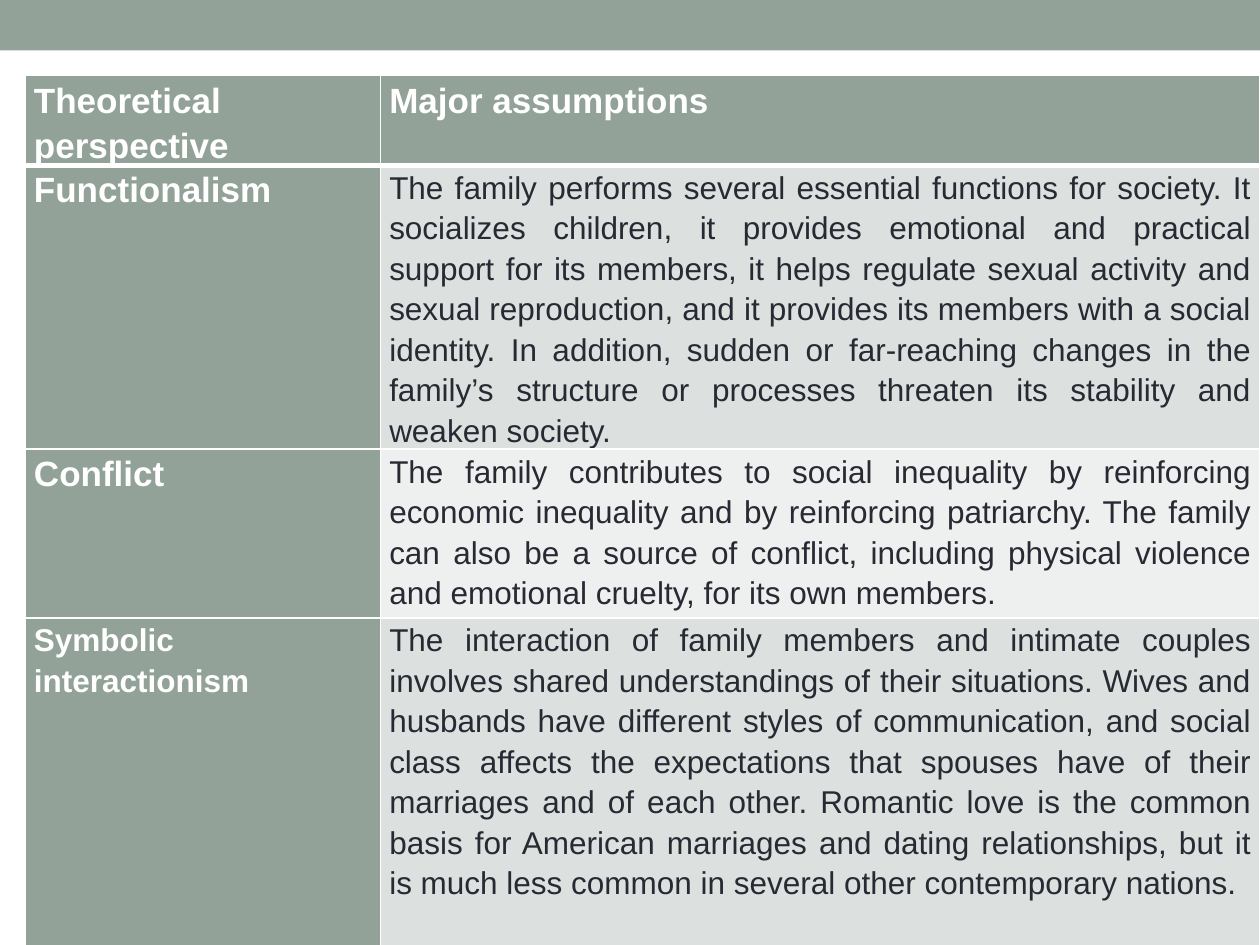
import pptx
import pptx.dml.color
import pptx.enum.shapes
import pptx.enum.text
import pptx.oxml
import pptx.oxml.ns
import pptx.util

THEME = {
    "font": "Arial",
    "sage": "93A299",
    "bands": ["DCE0DE", "EEF0EF"],
    "ink": "292934",
    "white": "FFFFFF",
    "large": 20,
    "body": 18,
    "rule": 1,
    "header_rule": 3,
}

# Each row: perspective, assumptions, label size, height in inches
PERSPECTIVES = [
    ("Theoretical perspective", "Major assumptions", THEME["large"], 0.47),
    ("Functionalism",
     "The family performs several essential functions for society. It socializes "
     "children, it provides emotional and practical support for its members, it helps "
     "regulate sexual activity and sexual reproduction, and it provides its members "
     "with a social identity. In addition, sudden or far-reaching changes in the "
     "family’s structure or processes threaten its stability and weaken society.",
     THEME["large"], 2.25),
    ("Conflict",
     "The family contributes to social inequality by reinforcing economic inequality "
     "and by reinforcing patriarchy. The family can also be a source of conflict, "
     "including physical violence and emotional cruelty, for its own members.",
     THEME["large"], 1.34),
    ("Symbolic interactionism",
     "The interaction of family members and intimate couples involves shared "
     "understandings of their situations. Wives and husbands have different styles of "
     "communication, and social class affects the expectations that spouses have of "
     "their marriages and of each other. Romantic love is the common basis for American "
     "marriages and dating relationships, but it is much less common in several other "
     "contemporary nations.",
     THEME["body"], 2.71),
]


def color(name):
    return pptx.dml.color.RGBColor.from_string(name)


def draw_border(cell, side, width):
    line = pptx.oxml.parse_xml(
        f'<a:{side} {pptx.oxml.ns.nsdecls("a")} w="{pptx.util.Pt(width)}">'
        f'<a:solidFill><a:srgbClr val="{THEME["white"]}"/></a:solidFill></a:{side}>')
    cell._tc.get_or_add_tcPr().append(line)


deck = pptx.Presentation()
deck.slide_width = pptx.util.Inches(10)
deck.slide_height = pptx.util.Inches(7.5)
slide = deck.slides.add_slide(deck.slide_layouts[6])

# Band across the top
band = slide.shapes.add_shape(
    pptx.enum.shapes.MSO_SHAPE.RECTANGLE, 0, 0, deck.slide_width, pptx.util.Inches(0.4))
band.shadow.inherit = False
band.fill.solid()
band.fill.fore_color.rgb = color(THEME["sage"])
band.line.fill.background()

# Table runs from the left margin to the right edge of the slide
margin = int(deck.slide_width * 0.02)
table_width = deck.slide_width - margin
label_width = pptx.util.Inches(2.82)
table = slide.shapes.add_table(
    len(PERSPECTIVES), 2, margin, int(deck.slide_height * 0.08), table_width,
    pptx.util.Inches(sum(row[3] for row in PERSPECTIVES))).table
table.columns[0].width = label_width
table.columns[1].width = table_width - label_width

for row, (perspective, assumptions, label_size, height) in enumerate(PERSPECTIVES):
    table.rows[row].height = pptx.util.Inches(height)
    for column, wording in enumerate((perspective, assumptions)):
        cell = table.cell(row, column)
        heading = row == 0 or column == 0
        cell.margin_left = cell.margin_right = pptx.util.Inches(0.07)
        cell.margin_top = cell.margin_bottom = 0

        # White rules, thicker beneath the header
        top = THEME["header_rule"] if row == 1 else THEME["rule"]
        bottom = THEME["header_rule"] if row == 0 else THEME["rule"]
        for side, width in (("lnL", THEME["rule"]), ("lnR", THEME["rule"]),
                            ("lnT", top), ("lnB", bottom)):
            draw_border(cell, side, width)

        # Sage headings, alternating bands for the assumptions
        cell.fill.solid()
        cell.fill.fore_color.rgb = color(
            THEME["sage"] if heading else THEME["bands"][(row - 1) % 2])

        cell.text = wording
        paragraph = cell.text_frame.paragraphs[0]
        paragraph.alignment = pptx.enum.text.PP_ALIGN.JUSTIFY
        paragraph.line_spacing = 1.15
        paragraph.space_after = pptx.util.Pt(10)
        paragraph.font.name = THEME["font"]
        paragraph.font.size = pptx.util.Pt(label_size if heading else THEME["body"])
        paragraph.font.bold = heading
        paragraph.font.color.rgb = color(THEME["white"] if heading else THEME["ink"])

deck.save("out.pptx")
